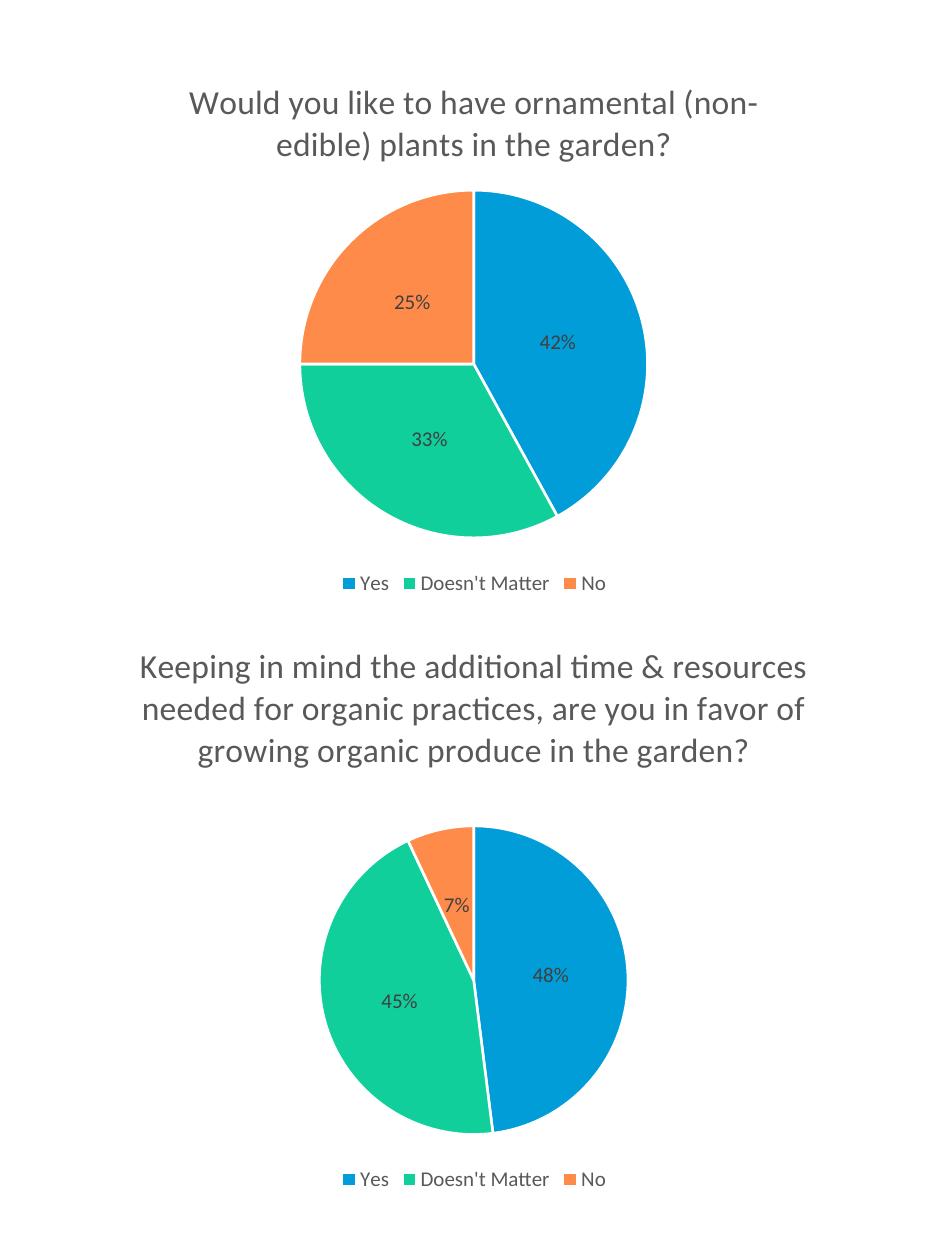
import dataclasses

import pptx
import pptx.chart.chart
import pptx.chart.data
import pptx.dml.color
import pptx.enum.chart
import pptx.oxml
import pptx.oxml.ns
import pptx.slide
import pptx.text.text
import pptx.util

Inches = pptx.util.Inches
Pt = pptx.util.Pt

FONT = "Calibri"
COLORS = {
    "Yes": "009DD9",
    "Doesn't Matter": "10CF9B",
    "No": "FF8B4B",
    "border": "FFFFFF",
    "text": "595959",
    "label": "404040",
}
ANSWERS = ("Yes", "Doesn't Matter", "No")
PIE_CENTER_X = 3.76


@dataclasses.dataclass(frozen=True)
class Poll:
    """One survey question; lengths are in inches on the slide."""

    question: str
    percents: tuple[int, ...]
    left: float
    top: float
    width: float
    height: float
    pie_center_y: float
    pie_diameter: float


POLLS = (
    Poll("Would you like to have ornamental (non-edible) plants in the garden?",
         (42, 33, 25), 0.55, 0.43, 6.43, 4.34, 2.89, 2.76),
    Poll("Keeping in mind the additional time & resources needed for organic "
         "practices, are you in favor of growing organic produce in the garden?",
         (48, 45, 7), 0.36, 4.9, 6.81, 4.6, 7.78, 2.45),
)


def rgb(name: str) -> pptx.dml.color.RGBColor:
    return pptx.dml.color.RGBColor.from_string(COLORS[name])


def style_font(font: pptx.text.text.Font, *, size: float, color: str) -> None:
    font.name = FONT
    font.size = Pt(size)
    font.bold = False
    font.color.rgb = rgb(color)


def write_title(chart: pptx.chart.chart.Chart, text: str, *, size: float, color: str) -> None:
    chart.has_title = True
    chart.chart_title.include_in_layout = False
    run = chart.chart_title.text_frame.paragraphs[0].add_run()
    run.text = text
    style_font(run.font, size=size, color=color)


def place_pie(chart: pptx.chart.chart.Chart, poll: Poll) -> None:
    """Fix the plot area as fractions of the chart, so that the pie keeps its diameter."""
    fractions = {
        "x": (PIE_CENTER_X - poll.pie_diameter / 2 - poll.left) / poll.width,
        "y": (poll.pie_center_y - poll.pie_diameter / 2 - poll.top) / poll.height,
        "w": poll.pie_diameter / poll.width,
        "h": poll.pie_diameter / poll.height,
    }
    values = "".join(f'<c:{key} val="{value:.4f}"/>' for key, value in fractions.items())
    layout = pptx.oxml.parse_xml(
        f'<c:layout {pptx.oxml.ns.nsdecls("c")}><c:manualLayout>'
        '<c:layoutTarget val="inner"/><c:xMode val="edge"/><c:yMode val="edge"/>'
        f"{values}</c:manualLayout></c:layout>"
    )
    plot_area = chart._chartSpace.chart.plotArea
    for automatic in plot_area.findall(pptx.oxml.ns.qn("c:layout")):
        plot_area.remove(automatic)
    plot_area.insert(0, layout)


def add_poll(slide: pptx.slide.Slide, poll: Poll) -> None:
    data = pptx.chart.data.CategoryChartData()
    data.categories = ANSWERS
    data.add_series("Series 1", poll.percents)
    chart = slide.shapes.add_chart(
        pptx.enum.chart.XL_CHART_TYPE.PIE,
        Inches(poll.left), Inches(poll.top), Inches(poll.width), Inches(poll.height), data,
    ).chart
    chart.font.name = FONT
    chart.font.size = Pt(10)
    write_title(chart, poll.question, size=19.2, color="text")
    place_pie(chart, poll)

    chart.has_legend = True
    chart.legend.position = pptx.enum.chart.XL_LEGEND_POSITION.BOTTOM
    chart.legend.include_in_layout = False
    style_font(chart.legend.font, size=12, color="text")

    plot = chart.plots[0]
    plot.vary_by_categories = True
    for index, answer in enumerate(ANSWERS):
        piece = plot.series[0].points[index].format
        piece.fill.solid()
        piece.fill.fore_color.rgb = rgb(answer)
        piece.line.color.rgb = rgb("border")
        piece.line.width = Pt(1.5)

    labels = plot.series[0].data_labels
    labels.show_percentage = True
    labels.show_value = False
    labels.number_format = "0%"
    labels.number_format_is_linked = False
    labels.position = pptx.enum.chart.XL_LABEL_POSITION.CENTER
    style_font(labels.font, size=12, color="label")


def main() -> None:
    presentation = pptx.Presentation()
    presentation.slide_width = Inches(7.5)
    presentation.slide_height = Inches(10)
    slide = presentation.slides.add_slide(presentation.slide_layouts[6])
    for poll in POLLS:
        add_poll(slide, poll)
    presentation.save("out.pptx")


if __name__ == "__main__":
    main()
